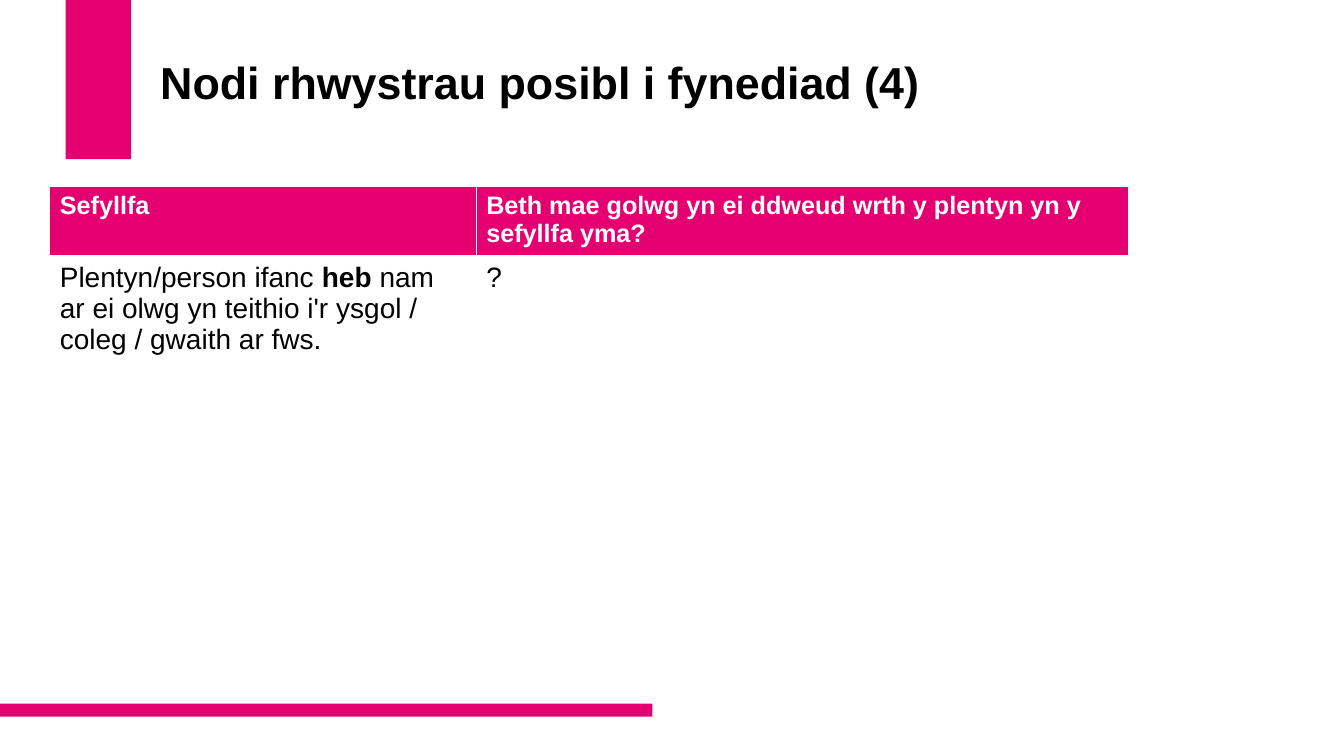
from lxml import etree
from pptx import Presentation
from pptx.dml.color import RGBColor
from pptx.enum.shapes import MSO_SHAPE
from pptx.enum.text import MSO_ANCHOR
from pptx.oxml.ns import qn
from pptx.util import Inches, Pt

RECT = MSO_SHAPE.RECTANGLE
TOP, MIDDLE = MSO_ANCHOR.TOP, MSO_ANCHOR.MIDDLE
WIDTH, HEIGHT = 13.33, 7.5
FONT = "Arial"
COLORS = {"pink": "E50071", "white": "FFFFFF", "black": "000000"}
COLUMNS = (31.73, 48.54)
ROWS = (8.67, 53.33)
HEADINGS = ("Sefyllfa", "Beth mae golwg yn ei ddweud wrth y plentyn yn y sefyllfa yma?")
ANSWERS = (
    (
        ("Plentyn/person ifanc ", False),
        ("heb ", True),
        ("nam ar ei olwg yn teithio i'r ysgol / coleg / gwaith ar fws.", False),
    ),
    "?",
)


def x(cols):
    """Convert hundredths of the slide width to a length."""
    return Inches(WIDTH * cols / 100)


def y(rows):
    """Convert hundredths of the slide height to a length."""
    return Inches(HEIGHT * rows / 100)


def color(name):
    """Return a named colour."""
    return RGBColor.from_string(COLORS[name])


def write(tf, text, size=20, fill="black", bold=False, anchor=TOP, spacing=None):
    """Write a string, or (string, bold) pairs, as one paragraph."""
    tf.word_wrap = True
    tf.vertical_anchor = anchor
    p = tf.paragraphs[0]
    if spacing:
        p.line_spacing = spacing
    for words, heavy in ((text, bold),) if isinstance(text, str) else text:
        r = p.add_run()
        r.text = words
        r.font.name = FONT
        r.font.size = Pt(size)
        r.font.bold = heavy
        r.font.color.rgb = color(fill)


def add_bar(s, left, top, width, height):
    """Add a plain pink bar."""
    bar = s.shapes.add_shape(RECT, x(left), y(top), x(width), y(height))
    bar.shadow.inherit = False
    bar.fill.solid()
    bar.fill.fore_color.rgb = color("pink")
    bar.line.fill.background()


def add_title(s, text):
    """Add the slide title, raised by a deep bottom margin."""
    sp = s.shapes.add_textbox(x(11.18), y(5.33), x(72.02), y(19.33))
    sp.text_frame.margin_bottom = y(8.27)
    write(sp.text_frame, text, size=32, bold=True, anchor=MIDDLE, spacing=0.9)


def style_cell(cell, fill, bottom):
    """Fill a cell and give it white borders."""
    props = cell._tc.get_or_add_tcPr()
    for side, weight in (("L", 1), ("R", 1), ("T", 1), ("B", bottom)):
        line = etree.SubElement(props, qn(f"a:ln{side}"), w=str(Pt(weight)))
        solid = etree.SubElement(line, qn("a:solidFill"))
        etree.SubElement(solid, qn("a:srgbClr"), val=COLORS["white"])
    cell.fill.solid()
    cell.fill.fore_color.rgb = color(fill)


def add_situation_table(s):
    """Add the table of situations and what vision tells the child."""
    frame = s.shapes.add_table(
        len(ROWS), len(COLUMNS), x(3.7), y(24.67), x(sum(COLUMNS)), y(sum(ROWS))
    )
    table = frame.table
    for row, height in zip(table.rows, ROWS):
        row.height = y(height)
    for i, width in enumerate(COLUMNS):
        table.columns[i].width = x(width)
        heading, answer = table.cell(0, i), table.cell(1, i)
        style_cell(heading, "pink", 3)
        style_cell(answer, "white", 1)
        write(heading.text_frame, HEADINGS[i], size=18, fill="white", bold=True)
        write(answer.text_frame, ANSWERS[i])


def main():
    """Build and save the slide."""
    prs = Presentation()
    prs.slide_width, prs.slide_height = x(100), y(100)
    s = prs.slides.add_slide(prs.slide_layouts[6])
    add_bar(s, 4.88, 0, 4.88, 21.07)
    add_bar(s, 0, 93.07, 48.54, 1.73)
    add_title(s, "Nodi rhwystrau posibl i fynediad (4)")
    add_situation_table(s)
    prs.save("out.pptx")


if __name__ == "__main__":
    main()
